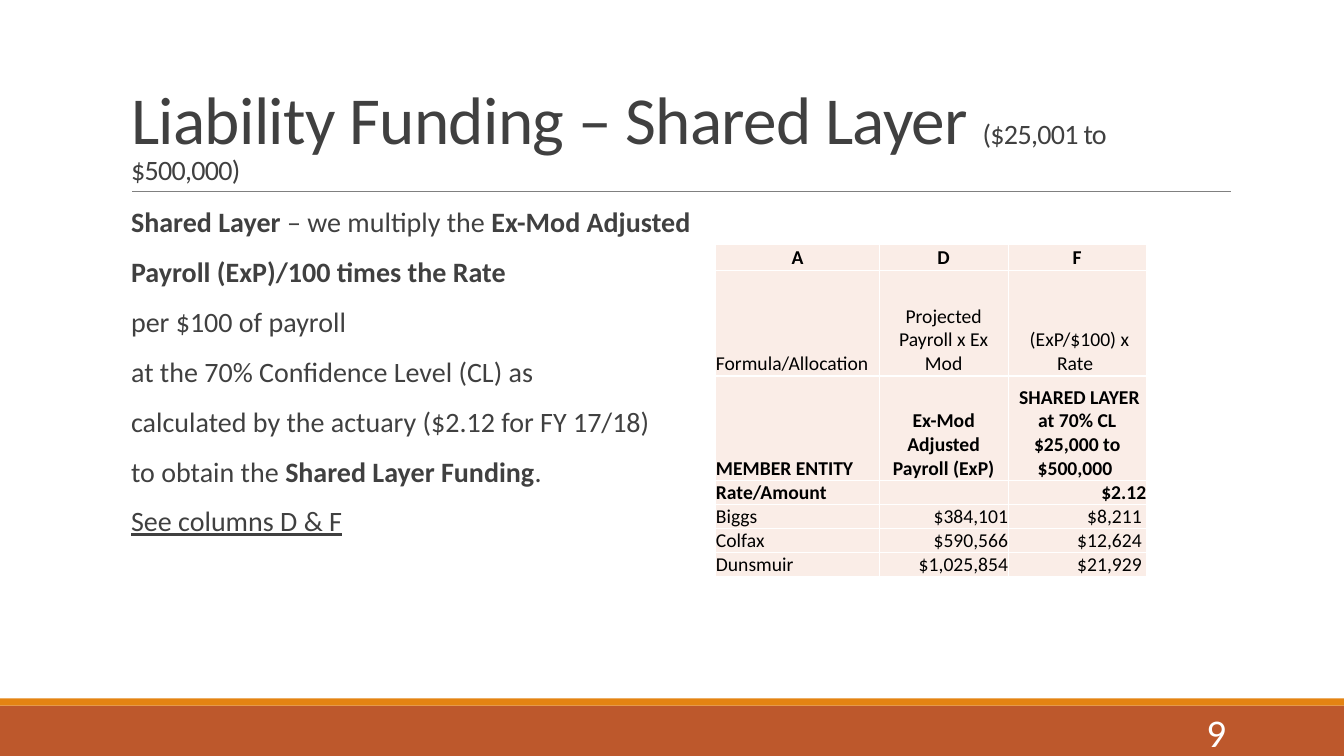
from lxml.etree import SubElement
from pptx import Presentation
from pptx.dml.color import RGBColor
from pptx.enum.shapes import MSO_CONNECTOR, MSO_SHAPE
from pptx.enum.text import MSO_ANCHOR, MSO_AUTO_SIZE, PP_ALIGN
from pptx.oxml.ns import qn
from pptx.util import Inches, Pt

FONT = "Calibri"
INK, WHITE, BLACK = "404040", "FFFFFF", "000000"
RUST, ORANGE, GRAY, BLUSH = "BD582C", "E48312", "808080", "FAEDE7"
LEFT, CENTER, RIGHT = PP_ALIGN.LEFT, PP_ALIGN.CENTER, PP_ALIGN.RIGHT

# Each line holds (text, bold, underline) pieces
BODY_LINES = [
    [("Shared Layer ", True, False), ("– we multiply the ", False, False),
     ("Ex-Mod Adjusted", True, False)],
    [("Payroll (ExP)/100 times the Rate", True, False)],
    [("per $100 of payroll", False, False)],
    [("at the 70% Confidence Level (CL) as", False, False)],
    [("calculated by the actuary ($2.12 for FY 17/18)", False, False)],
    [("to obtain the ", False, False), ("Shared Layer Funding", True, False),
     (".", False, False)],
    [("See columns D & F", False, True)],
]

# Each row holds height, bold, alignment of the three cells, texts
FUNDING_ROWS = [
    (0.26, True, (CENTER, CENTER, CENTER), ("A", " D ", " F ")),
    (1.05, False, (LEFT, CENTER, CENTER),
     ("Formula/Allocation", "Projected Payroll x Ex Mod", " (ExP/$100) x Rate ")),
    (1.04, True, (LEFT, CENTER, CENTER),
     ("MEMBER ENTITY", "Ex-Mod Adjusted Payroll (ExP)",
      " SHARED LAYER at 70% CL $25,000 to $500,000 ")),
    (0.21, True, (LEFT, RIGHT, RIGHT), ("Rate/Amount", "", "$2.12")),
    (0.21, False, (LEFT, RIGHT, RIGHT), ("Biggs", "$384,101", "$8,211 ")),
    (0.21, False, (LEFT, RIGHT, RIGHT), ("Colfax", "$590,566", "$12,624 ")),
    (0.21, False, (LEFT, RIGHT, RIGHT), ("Dunsmuir", "$1,025,854", "$21,929 ")),
]
FUNDING_COLUMNS = (1.62, 1.28, 1.37)


def rgb(color):
    return RGBColor.from_string(color)


def style(run, size, color, bold=False, underline=False):
    font = run.font
    font.name, font.size = FONT, Pt(size)
    font.bold, font.underline = bold, underline
    font.color.rgb = rgb(color)


def place(shape, left, top, width, height):
    shape.left, shape.top = Inches(left), Inches(top)
    shape.width, shape.height = Inches(width), Inches(height)


def add_band(slide, left, top, width, height, color):
    band = slide.shapes.add_shape(MSO_SHAPE.RECTANGLE, Inches(left), Inches(top),
                                  Inches(width), Inches(height))
    band.shadow.inherit = False
    band.fill.solid()
    band.fill.fore_color.rgb = rgb(color)
    band.line.fill.background()


def add_footer(slide, left, top, width, height):
    # Orange strip above the rust band, page number at the right
    strip = 0.07
    add_band(slide, left, top + strip, width, height - strip, RUST)
    add_band(slide, left, top, width, strip, ORANGE)
    page = slide.shapes.add_textbox(Inches(left + width - 2.5), Inches(top + 0.13),
                                    Inches(1.43), Inches(0.4))
    frame = page.text_frame
    frame.word_wrap = True
    frame.vertical_anchor = MSO_ANCHOR.MIDDLE
    frame.text = "9"
    frame.paragraphs[0].alignment = RIGHT
    style(frame.paragraphs[0].runs[0], 28, WHITE)


def fill_title(slide, left, top, width, height):
    title = slide.shapes.title
    place(title, left, top, width, height)
    frame = title.text_frame
    frame.auto_size = MSO_AUTO_SIZE.NONE
    frame.word_wrap = True
    frame.vertical_anchor = MSO_ANCHOR.BOTTOM
    heading = frame.paragraphs[0]
    heading.text = "Liability Funding – Shared Layer "
    heading.alignment, heading.line_spacing = LEFT, 0.85
    heading.add_run().text = "($25,001 to $500,000)"
    for run, size in zip(heading.runs, (48, 20)):
        style(run, size, INK)
        run.font._element.set("spc", "-50")

    # Rule under the title
    rule = slide.shapes.add_connector(
        MSO_CONNECTOR.STRAIGHT, Inches(left + 0.11), Inches(top + height),
        Inches(left + width + 0.01), Inches(top + height))
    rule.line.color.rgb = rgb(GRAY)
    rule.line.width = Pt(0.5)
    SubElement(rule._element.spPr, qn("a:effectLst"))


def add_blank_bullet(paragraph):
    properties = paragraph._p.get_or_add_pPr()
    properties.set("marL", str(Inches(0.1)))
    properties.set("indent", str(-Inches(0.1)))
    bullet_color = SubElement(properties, qn("a:buClr"))
    SubElement(bullet_color, qn("a:srgbClr")).set("val", ORANGE)
    SubElement(properties, qn("a:buChar")).set("char", " ")


def fill_body(slide, left, top, width, height):
    body = slide.placeholders[1]
    place(body, left, top, width, height)
    frame = body.text_frame
    frame.auto_size = MSO_AUTO_SIZE.NONE
    frame.word_wrap = True
    frame.vertical_anchor = MSO_ANCHOR.TOP
    frame.margin_left = frame.margin_right = 0
    frame.text = "\n".join("" for _ in BODY_LINES)
    for paragraph, pieces in zip(frame.paragraphs, BODY_LINES):
        paragraph.alignment, paragraph.line_spacing = LEFT, 0.9
        paragraph.space_before, paragraph.space_after = Pt(12), Pt(2)
        add_blank_bullet(paragraph)
        for text, bold, underline in pieces:
            run = paragraph.add_run()
            run.text = text
            style(run, 20, INK, bold, underline)


def add_borders(cell):
    properties = cell._tc.get_or_add_tcPr()
    for side in ("lnL", "lnR", "lnT", "lnB"):
        border = SubElement(properties, qn(f"a:{side}"))
        border.set("w", str(Pt(1)))
        fill = SubElement(border, qn("a:solidFill"))
        SubElement(fill, qn("a:srgbClr")).set("val", WHITE)


def fill_cell(cell, text, bold, alignment):
    add_borders(cell)
    cell.fill.solid()
    cell.fill.fore_color.rgb = rgb(BLUSH)
    cell.margin_left = cell.margin_right = cell.margin_top = cell.margin_bottom = 0
    cell.vertical_anchor = MSO_ANCHOR.BOTTOM
    paragraph = cell.text_frame.paragraphs[0]
    paragraph.text = text
    paragraph.alignment = alignment
    for run in paragraph.runs:
        style(run, 14, BLACK, bold)
    if not text:
        # Keeps the empty cell as low as its row
        SubElement(paragraph._p, qn("a:endParaRPr")).set("sz", "1400")


def add_funding_table(slide, left, top, width, height):
    table = slide.shapes.add_table(
        len(FUNDING_ROWS), len(FUNDING_COLUMNS), Inches(left), Inches(top),
        Inches(width), Inches(height)).table
    for column, column_width in zip(table.columns, FUNDING_COLUMNS):
        column.width = Inches(column_width)
    for row, (row_height, bold, alignments, texts) in zip(table.rows, FUNDING_ROWS):
        row.height = Inches(row_height)
        for cell, text, alignment in zip(row.cells, texts, alignments):
            fill_cell(cell, text, bold, alignment)


def main():
    deck = Presentation()
    deck.slide_width, deck.slide_height = Inches(13.33), Inches(7.5)
    slide = deck.slides.add_slide(deck.slide_layouts[1])
    fill_title(slide, 1.2, 0.31, 11, 1.59)
    fill_body(slide, 1.2, 2.02, 11, 4.4)
    add_funding_table(slide, 7.1, 2.42, 4.28, 3.29)
    add_footer(slide, 0, 6.93, 13.33, 0.57)
    deck.save("out.pptx")


if __name__ == "__main__":
    main()
